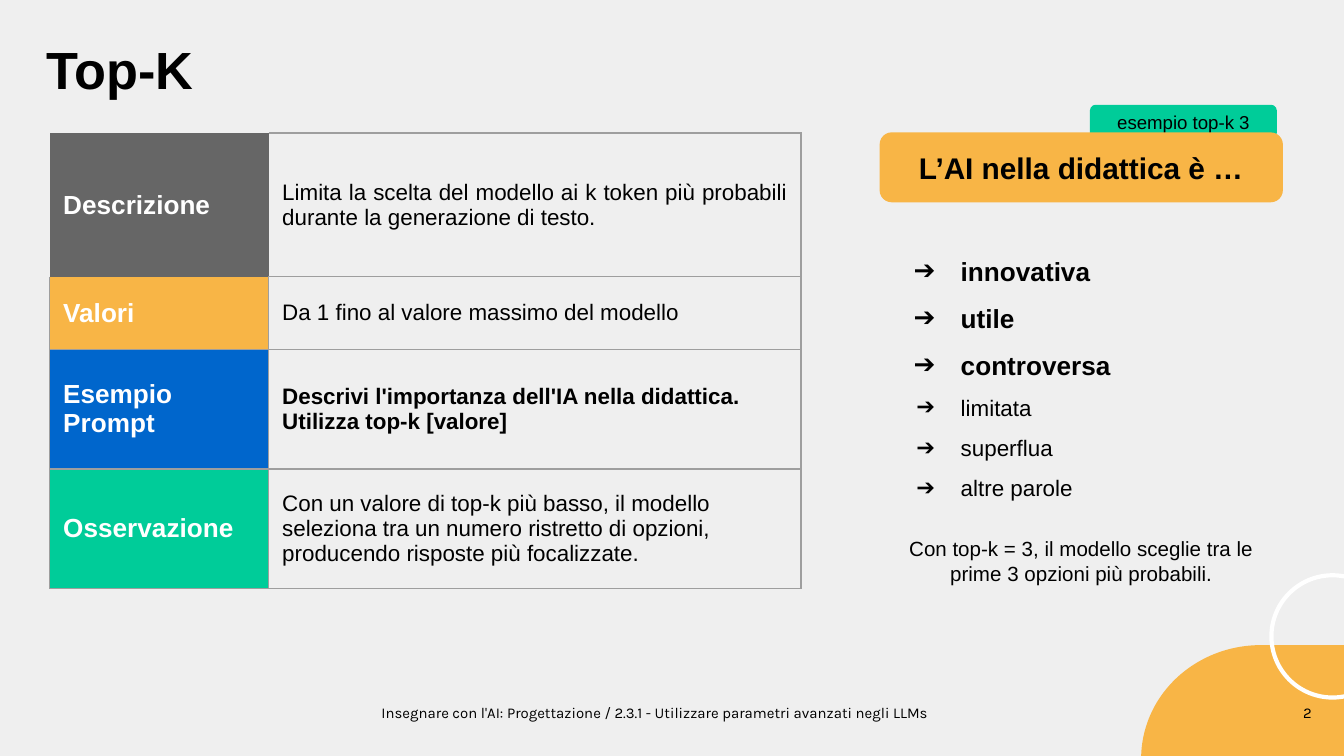
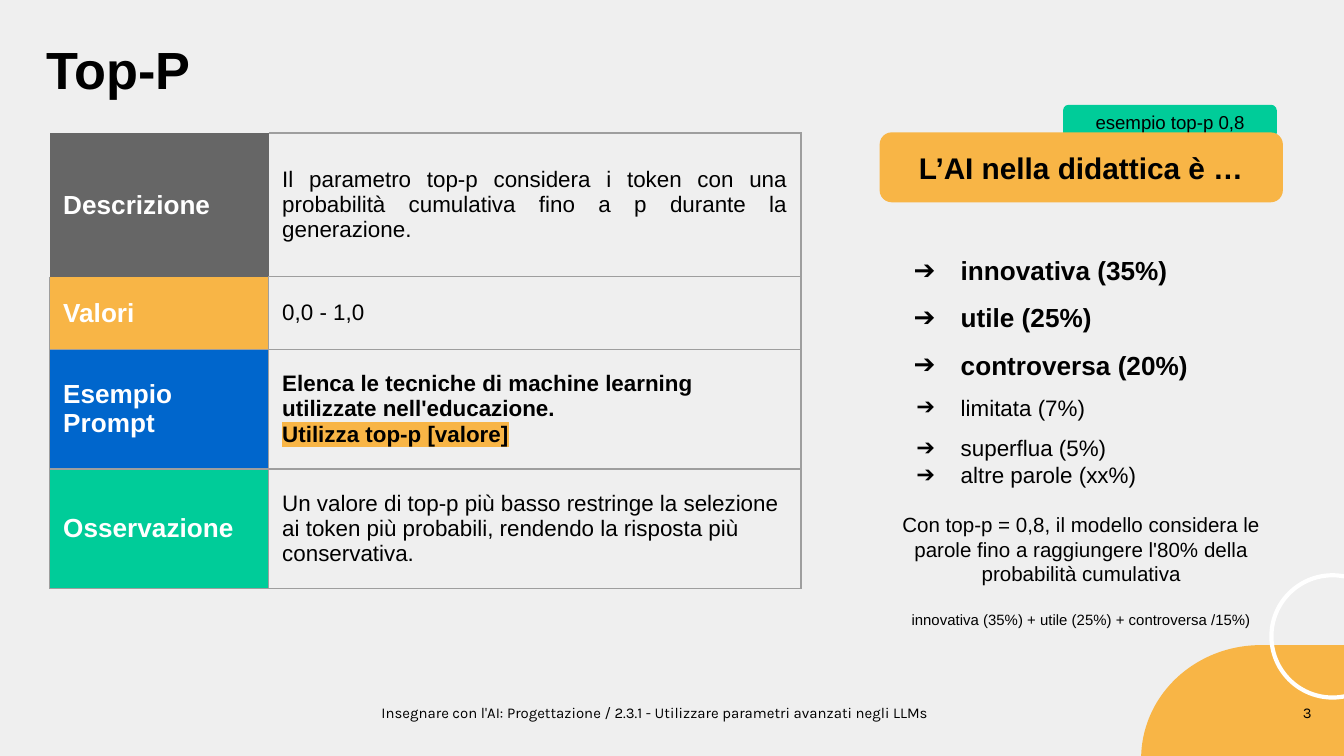
from lxml.etree import SubElement
from pptx import Presentation
from pptx.dml.color import RGBColor
from pptx.enum.shapes import MSO_SHAPE as Shape
from pptx.enum.text import MSO_ANCHOR as Anchor, PP_ALIGN as Align
from pptx.oxml.ns import qn
from pptx.util import Inches, Pt

# Shared look
PAPER, BLACK, WHITE = "EFEFEF", "000000", "FFFFFF"
GREY, ORANGE, BLUE, GREEN = "666666", "F8B546", "0066CC", "00CC99"
BORDER = "9E9E9E"
FOOTER = ("Insegnare con l'AI: Progettazione / 2.3.1 - "
          "Utilizzare parametri avanzati negli LLMs")
HEADLINE = "L’AI nella didattica è …"

# Table rows: label, fill, height, alignment, borders of label and of value
ROWS = [
    ("Descrizione", GREY, 1.07, Align.JUSTIFY, "", "TRB"),
    ("Valori", ORANGE, 0.54, Align.LEFT, "LRB", "LTRB"),
    ("Esempio Prompt", BLUE, 0.89, Align.LEFT, "LTRB", "LTRB"),
    ("Osservazione", GREEN, 0.89, Align.LEFT, "LTRB", "LTRB"),
]
PROMPT_ROW = 2
LIKELY_WORDS = 3

TOP_K = {
    "title": "Top-K",
    "values": [
        "Limita la scelta del modello ai k token più probabili durante la "
        "generazione di testo.",
        "Da 1 fino al valore massimo del modello",
        "Descrivi l'importanza dell'IA nella didattica. "
        "Utilizza top-k [valore]",
        "Con un valore di top-k più basso, il modello seleziona tra un numero "
        "ristretto di opzioni, producendo risposte più focalizzate.",
    ],
    "marked": "",
    "tag": "esempio top-k 3",
    "tag_width": 1.39,
    "words": ["innovativa", "utile", "controversa",
              "limitata", "superflua", "altre parole"],
    "last_spacing": 1.5,
    # Closing notes: text, size, space before
    "notes": [("Con top-k = 3, il modello sceglie tra le prime 3 opzioni "
               "più probabili.", 11, 18.5)],
    "words_height": 2.81,
}
TOP_P = {
    "title": "Top-P",
    "values": [
        "Il parametro top-p considera i token con una probabilità cumulativa "
        "fino a p durante la generazione.",
        "0,0 - 1,0",
        "Elenca le tecniche di machine learning utilizzate nell'educazione.",
        "Un valore di top-p più basso restringe la selezione ai token più "
        "probabili, rendendo la risposta più conservativa.",
    ],
    "marked": "Utilizza top-p [valore]",
    "tag": "esempio top-p 0,8",
    "tag_width": 1.59,
    "words": ["innovativa (35%)", "utile (25%)", "controversa (20%)",
              "limitata (7%)", "superflua (5%)", "altre parole (xx%)"],
    "last_spacing": 1.0,
    "notes": [("Con top-p = 0,8, il modello considera le parole fino a "
               "raggiungere l'80% della probabilità cumulativa", 11, 13),
              ("innovativa (35%) + utile (25%) + controversa /15%)", 8, 13)],
    "words_height": 3.13,
}


def color(code):
    return RGBColor.from_string(code)


def style(paragraph, size, ink=BLACK, bold=False, align=Align.LEFT,
          face="Arial"):
    paragraph.alignment = align
    font = paragraph.font
    font.name, font.size, font.bold = face, Pt(size), bold
    font.color.rgb = color(ink)


def set_margins(frame, margin):
    frame.margin_left = frame.margin_right = Inches(margin)
    frame.margin_top = frame.margin_bottom = Inches(margin)
    frame.word_wrap = True


def add_text(slide, box, margin=0.1):
    frame = slide.shapes.add_textbox(*map(Inches, box)).text_frame
    set_margins(frame, margin)
    return frame


def add_line_of_text(slide, box, text, size, margin=0.1, **look):
    paragraph = add_text(slide, box, margin).paragraphs[0]
    paragraph.text = text
    style(paragraph, size, **look)


def add_figure(slide, kind, box, fill=None, line=None, weight=0.75,
               rotation=0):
    figure = slide.shapes.add_shape(kind, *map(Inches, box))
    figure.shadow.inherit = False
    figure.rotation = rotation
    if fill:
        figure.fill.solid()
        figure.fill.fore_color.rgb = color(fill)
    else:
        figure.fill.background()
    if line:
        figure.line.color.rgb = color(line)
        figure.line.width = Pt(weight)
    else:
        figure.line.fill.background()
    return figure


def add_banner(slide, box, text, fill, size, line=None, bold=False):
    banner = add_figure(slide, Shape.ROUNDED_RECTANGLE, box, fill, line)
    frame = banner.text_frame
    set_margins(frame, 0.1)
    frame.vertical_anchor = Anchor.MIDDLE
    frame.text = text
    style(frame.paragraphs[0], size, bold=bold, align=Align.CENTER)


def set_borders(cell, sides):
    properties = cell._tc.get_or_add_tcPr()
    for side in "LRTB":
        edge = SubElement(properties, qn(f"a:ln{side}"), w=str(Pt(0.75)))
        if side in sides:
            fill = SubElement(edge, qn("a:solidFill"))
            SubElement(fill, qn("a:srgbClr"), val=BORDER)
        else:
            SubElement(edge, qn("a:noFill"))


def fill_cell(cell, text, sides, fill=None, **look):
    set_borders(cell, sides)
    if fill:
        cell.fill.solid()
        cell.fill.fore_color.rgb = color(fill)
    else:
        cell.fill.background()
    cell.vertical_anchor = Anchor.MIDDLE
    cell.margin_left = cell.margin_right = Inches(0.1)
    cell.margin_top = cell.margin_bottom = Inches(0.1)
    paragraph = cell.text_frame.paragraphs[0]
    paragraph.text = text
    style(paragraph, **look)


def add_marked_run(paragraph, text):
    paragraph.add_line_break()
    run = paragraph.add_run()
    run.text = text
    highlight = SubElement(run._r.get_or_add_rPr(), qn("a:highlight"))
    SubElement(highlight, qn("a:srgbClr"), val=ORANGE)


def add_parameter_table(slide, values, marked):
    height = sum(row[2] for row in ROWS)
    table = slide.shapes.add_table(
        len(ROWS), 2, *map(Inches, (0.37, 0.99, 5.59, height))).table
    table.first_row = table.horz_banding = False
    for column, width in zip(table.columns, (1.63, 3.96)):
        column.width = Inches(width)
    for index, (row, value) in enumerate(zip(ROWS, values)):
        label, fill, row_height, align, label_sides, value_sides = row
        table.rows[index].height = Inches(row_height)
        fill_cell(table.cell(index, 0), label, label_sides, fill,
                  size=14, ink=WHITE, bold=True, align=align)
        fill_cell(table.cell(index, 1), value, value_sides,
                  size=12, bold=index == PROMPT_ROW, align=align)
    if marked:
        prompt = table.cell(PROMPT_ROW, 1).text_frame.paragraphs[0]
        add_marked_run(prompt, marked)


def set_arrow_bullet(paragraph, hanging):
    properties = paragraph._p.get_or_add_pPr()
    properties.set("marL", str(Inches(0.5)))
    properties.set("indent", str(-Inches(hanging)))
    ink = SubElement(properties, qn("a:buClr"))
    SubElement(ink, qn("a:srgbClr"), val=BLACK)
    SubElement(properties, qn("a:buFont"), typeface="Arial")
    SubElement(properties, qn("a:buChar"), char="➔")


def add_word_list(slide, content):
    frame = add_text(slide, (6.55, 1.68, 2.99, content["words_height"]))
    for index, word in enumerate(content["words"]):
        paragraph = frame.add_paragraph() if index else frame.paragraphs[0]
        likely = index < LIKELY_WORDS
        paragraph.text = word
        set_arrow_bullet(paragraph, 0.35 if likely else 0.33)
        paragraph.line_spacing = 1.5
        style(paragraph, 14 if likely else 12, bold=likely)
    paragraph.line_spacing = content["last_spacing"]
    for text, size, gap in content["notes"]:
        note = frame.add_paragraph()
        note.text = text
        note.space_before = Pt(gap)
        style(note, size, align=Align.CENTER)


def add_base(deck, title, number):
    slide = deck.slides.add_slide(deck.slide_layouts[6])
    slide.background.fill.solid()
    slide.background.fill.fore_color.rgb = color(PAPER)
    # Footer and corner decoration
    add_line_of_text(slide, (0.38, 5.17, 8.99, 0.29), FOOTER, 8, margin=0.07,
                     align=Align.CENTER, face="Karla")
    add_figure(slide, Shape.FLOWCHART_DELAY, (8.49, 4.8, 1.78, 1.69),
               fill=ORANGE, rotation=180)
    add_figure(slide, Shape.OVAL, (9.46, 4.28, 0.91, 0.91),
               line=WHITE, weight=2.25, rotation=270)
    add_line_of_text(slide, (9.22, 5.17, 0.61, 0.46), str(number), 8,
                     margin=0.07, align=Align.RIGHT, face="Karla")
    add_line_of_text(slide, (0.25, 0.18, 8.97, 0.7), title, 28, bold=True)
    return slide


def add_parameter_slide(deck, content, number):
    slide = add_base(deck, content["title"], number)
    add_parameter_table(slide, content["values"], content["marked"])
    # Example panel: the tag ends at a fixed right edge behind the headline
    width = content["tag_width"]
    add_banner(slide, (9.5 - width, 0.78, width, 0.25), content["tag"],
               GREEN, 10)
    add_banner(slide, (6.55, 0.99, 2.99, 0.51), HEADLINE, ORANGE, 16,
               line=ORANGE, bold=True)
    add_word_list(slide, content)


def main():
    deck = Presentation()
    # Widescreen, 16:9
    deck.slide_width = Inches(10)
    deck.slide_height = deck.slide_width * 9 // 16
    for number, content in enumerate((TOP_K, TOP_P), start=2):
        add_parameter_slide(deck, content, number)
    deck.save("out.pptx")


if __name__ == "__main__":
    main()
